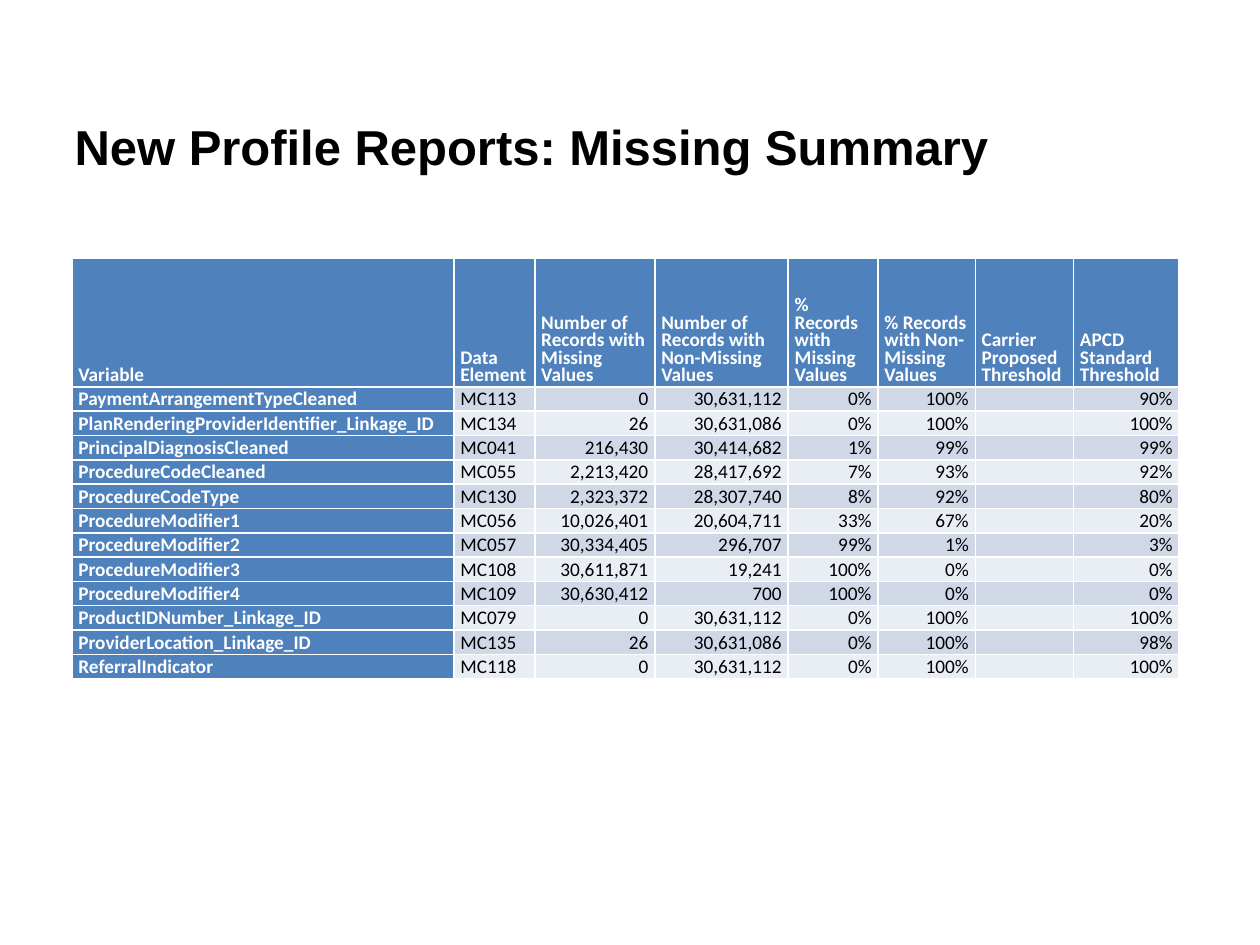
from dataclasses import dataclass

from pptx import Presentation
from pptx import util as u
from pptx.dml.color import RGBColor
from pptx.enum import text

WHITE, BLACK, BLUE = "FFFFFF", "000000", "4F81BD"
BANDS = ("D0D8E8", "E9EDF4")
HEADER_HEIGHT, ROW_HEIGHT = 2.6, 0.49


@dataclass(frozen=True)
class Column:
    heading: str
    width: float
    align: text.PP_ALIGN = text.PP_ALIGN.RIGHT


@dataclass(frozen=True)
class Profile:
    variable: str
    element: str
    missing: str
    present: str
    missing_share: str
    present_share: str
    standard: str

    def values(self) -> tuple:
        """Return the row's texts; the carrier's proposal is still blank."""
        return (self.variable, self.element, self.missing, self.present,
                self.missing_share, self.present_share, "", self.standard)


COLUMNS = (
    Column("Variable", 7.7, text.PP_ALIGN.LEFT),
    Column("Data Element", 1.63, text.PP_ALIGN.LEFT),
    Column("Number of Records with Missing Values", 2.42),
    Column("Number of Records with Non-Missing Values", 2.69),
    Column("% Records with Missing Values", 1.81),
    Column("% Records with Non-Missing Values", 1.96),
    Column("Carrier Proposed Threshold", 1.98),
    Column("APCD Standard Threshold", 2.13),
)

PROFILES = (
    Profile("PaymentArrangementTypeCleaned", "MC113", "0", "30,631,112", "0%", "100%", "90%"),
    Profile("PlanRenderingProviderIdentifier_Linkage_ID", "MC134", "26", "30,631,086", "0%", "100%", "100%"),
    Profile("PrincipalDiagnosisCleaned", "MC041", "216,430", "30,414,682", "1%", "99%", "99%"),
    Profile("ProcedureCodeCleaned", "MC055", "2,213,420", "28,417,692", "7%", "93%", "92%"),
    Profile("ProcedureCodeType", "MC130", "2,323,372", "28,307,740", "8%", "92%", "80%"),
    Profile("ProcedureModifier1", "MC056", "10,026,401", "20,604,711", "33%", "67%", "20%"),
    Profile("ProcedureModifier2", "MC057", "30,334,405", "296,707", "99%", "1%", "3%"),
    Profile("ProcedureModifier3", "MC108", "30,611,871", "19,241", "100%", "0%", "0%"),
    Profile("ProcedureModifier4", "MC109", "30,630,412", "700", "100%", "0%", "0%"),
    Profile("ProductIDNumber_Linkage_ID", "MC079", "0", "30,631,112", "0%", "100%", "100%"),
    Profile("ProviderLocation_Linkage_ID", "MC135", "26", "30,631,086", "0%", "100%", "98%"),
    Profile("ReferralIndicator", "MC118", "0", "30,631,112", "0%", "100%", "100%"),
)


def color(value: str) -> RGBColor:
    return RGBColor.from_string(value)


def set_font(para, name: str, size: float, ink: str, bold: bool) -> None:
    font = para.font
    font.name, font.size, font.bold = name, u.Pt(size), bold
    font.color.rgb = color(ink)


def fill_cell(cell, words: str, align: text.PP_ALIGN, fill: str, strong: bool) -> None:
    cell.fill.solid()
    cell.fill.fore_color.rgb = color(fill)
    cell.margin_left = cell.margin_right = u.Cm(0.13)
    cell.margin_top = cell.margin_bottom = 0
    cell.vertical_anchor = text.MSO_ANCHOR.BOTTOM
    cell.text = words
    para = cell.text_frame.paragraphs[0]
    para.alignment = align
    para.line_spacing = u.Pt(10)
    set_font(para, "Calibri", 11, WHITE if strong else BLACK, strong)


def add_title(page, words: str) -> None:
    title = page.shapes.title
    title.left, title.top = u.Cm(1.25), u.Cm(2.06)
    title.width, title.height = u.Cm(22.33), u.Cm(1.78)
    title.text = words
    title.text_frame.vertical_anchor = text.MSO_ANCHOR.MIDDLE
    para = title.text_frame.paragraphs[0]
    para.alignment = text.PP_ALIGN.LEFT
    set_font(para, "Arial", 28, BLACK, True)


def add_summary(page) -> None:
    """Add the table; its default style draws the white rules."""
    width = sum(column.width for column in COLUMNS)
    height = HEADER_HEIGHT + ROW_HEIGHT * len(PROFILES)
    table = page.shapes.add_table(len(PROFILES) + 1, len(COLUMNS), u.Cm(1.45),
                                  u.Cm(5.2), u.Cm(width), u.Cm(height)).table
    table.first_col = True
    table.rows[0].height = u.Cm(HEADER_HEIGHT)
    for index, column in enumerate(COLUMNS):
        table.columns[index].width = u.Cm(column.width)
        fill_cell(table.cell(0, index), column.heading, text.PP_ALIGN.LEFT, BLUE, True)
    for number, profile in enumerate(PROFILES, start=1):
        table.rows[number].height = u.Cm(ROW_HEIGHT)
        band = BANDS[(number - 1) % 2]
        for index, (column, words) in enumerate(zip(COLUMNS, profile.values())):
            strong = index == 0
            fill_cell(table.cell(number, index), words, column.align,
                      BLUE if strong else band, strong)


def main() -> None:
    deck = Presentation()
    deck.slide_width, deck.slide_height = u.Cm(25.4), u.Cm(19.05)
    page = deck.slides.add_slide(deck.slide_layouts[5])
    add_title(page, "New Profile Reports: Missing Summary")
    add_summary(page)
    deck.save("out.pptx")


if __name__ == "__main__":
    main()
